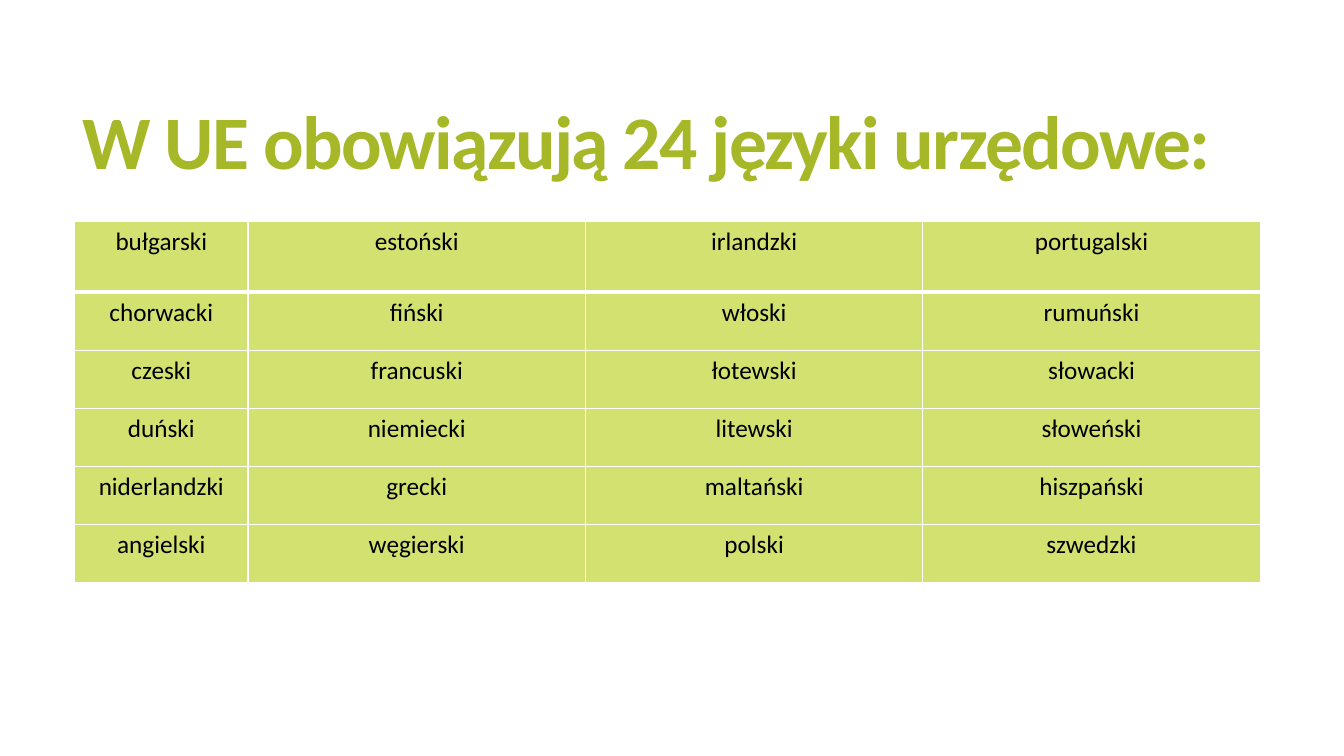
from lxml import etree
from pptx import Presentation
from pptx.dml.color import RGBColor
from pptx.enum.text import MSO_ANCHOR, MSO_AUTO_SIZE, PP_ALIGN
from pptx.oxml.ns import qn
from pptx.util import Inches, Pt

GREEN = RGBColor(0xA6, 0xB7, 0x27)
LIME = RGBColor(0xD3, 0xE1, 0x71)
BLACK = RGBColor(0, 0, 0)
WHITE = RGBColor(0xFF, 0xFF, 0xFF)

TITLE_FONT = {"name": "Calibri", "size": Pt(54), "bold": True}
CELL_FONT = {"name": "Calibri", "size": Pt(18), "bold": False}

LANGUAGES = [
    ["bułgarski", "estoński", "irlandzki", "portugalski"],
    ["chorwacki", "fiński", "włoski", "rumuński"],
    ["czeski", "francuski", "łotewski", "słowacki"],
    ["duński", "niemiecki", "litewski", "słoweński"],
    ["niderlandzki", "grecki", "maltański", "hiszpański"],
    ["angielski", "węgierski", "polski", "szwedzki"],
]
FIRST_COLUMN = 1.72
FIRST_ROW = 0.7


def format_font(font, values, color):
    for attribute, value in values.items():
        setattr(font, attribute, value)
    font.color.rgb = color


def add_title(slide, left, top, width, height):
    title = slide.shapes.title
    title.left, title.top = Inches(left), Inches(top)
    title.width, title.height = Inches(width), Inches(height)
    frame = title.text_frame
    frame.auto_size = MSO_AUTO_SIZE.NONE
    frame.vertical_anchor = MSO_ANCHOR.MIDDLE
    paragraph = frame.paragraphs[0]
    paragraph.alignment = PP_ALIGN.LEFT
    paragraph.line_spacing = 0.85
    heading = paragraph.add_run()
    heading.text = "W UE obowiązują 24 języki urzędowe:"
    format_font(heading.font, TITLE_FONT, GREEN)
    heading.font._element.set("spc", "-120")


def set_borders(cell, bottom_width):
    """Draw white lines on all four sides, the bottom one in its own width."""
    properties = cell._tc.get_or_add_tcPr()
    widths = {"a:lnL": 1, "a:lnR": 1, "a:lnT": 1, "a:lnB": bottom_width}
    for position, (side, width) in enumerate(widths.items()):
        line = etree.Element(qn(side), w=str(Pt(width)))
        fill = etree.SubElement(line, qn("a:solidFill"))
        etree.SubElement(fill, qn("a:srgbClr"), val=str(WHITE))
        properties.insert(position, line)


def fill_cell(cell, language, bottom_width):
    cell.fill.solid()
    cell.fill.fore_color.rgb = LIME
    set_borders(cell, bottom_width)
    paragraph = cell.text_frame.paragraphs[0]
    paragraph.alignment = PP_ALIGN.CENTER
    run = paragraph.add_run()
    run.text = language
    format_font(run.font, CELL_FONT, BLACK)


def add_language_table(slide, left, top, width, height):
    row_count, column_count = len(LANGUAGES), len(LANGUAGES[0])
    table = slide.shapes.add_table(
        row_count, column_count,
        Inches(left), Inches(top), Inches(width), Inches(height)).table
    other_column = (width - FIRST_COLUMN) / (column_count - 1)
    other_row = (height - FIRST_ROW) / (row_count - 1)
    for index, column in enumerate(table.columns):
        column.width = Inches(other_column if index else FIRST_COLUMN)
    for index, row in enumerate(table.rows):
        row.height = Inches(other_row if index else FIRST_ROW)
        for cell, language in zip(row.cells, LANGUAGES[index]):
            fill_cell(cell, language, bottom_width=1 if index else 3)
    # The thick line belongs to both rows that meet there
    for cell in table.rows[1].cells:
        cell._tc.tcPr.find(qn("a:lnT")).set("w", str(Pt(3)))


def main():
    presentation = Presentation()
    presentation.slide_width = Inches(13.33)
    presentation.slide_height = Inches(7.5)
    slide = presentation.slides.add_slide(presentation.slide_layouts[5])
    add_title(slide, 0.72, 0.55, 11.78, 1.81)
    add_language_table(slide, 0.74, 2.2, 11.76, 3.58)
    presentation.save("out.pptx")


if __name__ == "__main__":
    main()
